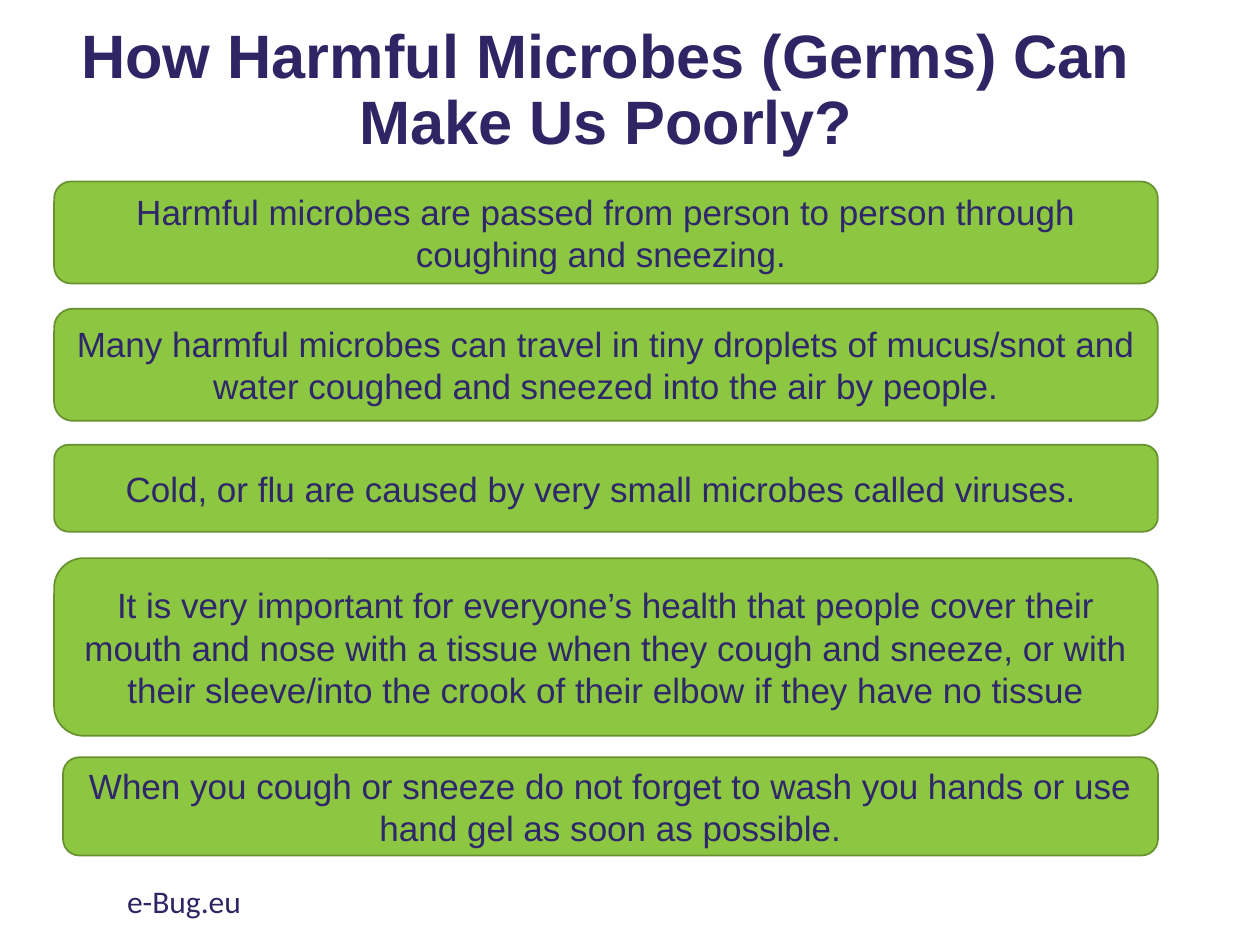
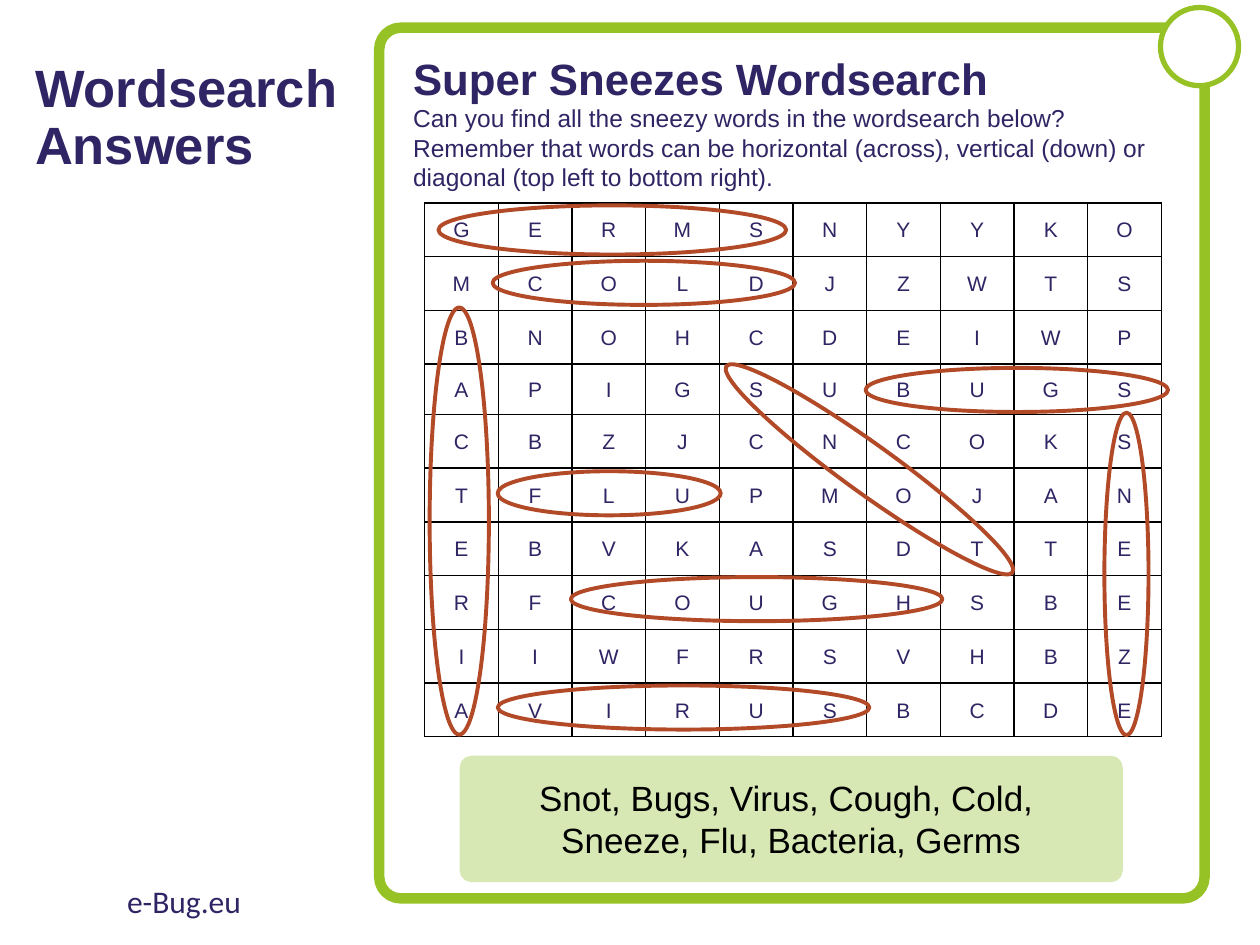
from dataclasses import dataclass

from lxml import etree
from pptx import Presentation
from pptx.dml.color import RGBColor
from pptx.enum.shapes import MSO_SHAPE
from pptx.enum.text import MSO_ANCHOR, PP_ALIGN
from pptx.oxml.ns import qn
from pptx.util import Inches, Pt

ROUND_RECT, ELLIPSE = MSO_SHAPE.ROUNDED_RECTANGLE, MSO_SHAPE.OVAL
LEFT, CENTER = PP_ALIGN.LEFT, PP_ALIGN.CENTER
TOP, MIDDLE = MSO_ANCHOR.TOP, MSO_ANCHOR.MIDDLE

NAVY, FACT_TEXT, BLACK, WHITE = "302564", "2E276A", "000000", "FFFFFF"
FACT_FILL, FACT_LINE = "8DC641", "689230"
FRAME_GREEN, PALE_GREEN, RING_RED = "96C225", "D7E8B5", "B24A28"


@dataclass
class Box:
    left: float
    top: float
    width: float
    height: float

    def lengths(self):
        return [Inches(v) for v in (self.left, self.top, self.width, self.height)]


@dataclass
class Style:
    size: float
    color: str = NAVY
    bold: bool = False
    font: str = "Arial"
    align: PP_ALIGN = LEFT
    spacing: float = 1.0


@dataclass
class Fact:
    box: Box
    text: str


@dataclass
class Ring:
    """An ellipse round one found word."""
    box: Box
    rotation: float = 0


FOOTER = Style(18, font="Calibri")
FACT = Style(20, FACT_TEXT, align=CENTER)
ANSWERS = Style(20, BLACK, align=CENTER)
LETTER = Style(12, align=CENTER, spacing=1.07)

FACTS = [
    Fact(Box(0.43, 1.44, 8.76, 0.81),
         "Harmful microbes are passed from person to person through coughing and sneezing. "),
    Fact(Box(0.43, 2.45, 8.76, 0.89),
         "Many harmful microbes can travel in tiny droplets of mucus/snot and water "
         "coughed and sneezed into the air by people."),
    Fact(Box(0.43, 3.53, 8.76, 0.69),
         "Cold, or flu are caused by very small microbes called viruses. "),
    Fact(Box(0.43, 4.43, 8.76, 1.41),
         "It is very important for everyone’s health that people cover their mouth and nose "
         "with a tissue when they cough and sneeze, or with their sleeve/into the crook of "
         "their elbow if they have no tissue"),
    Fact(Box(0.5, 6.01, 8.69, 0.78),
         "When you cough or sneeze do not forget to wash you hands or use hand gel "
         "as soon as possible."),
]

LETTERS = [
    "GERMSNYYKO",
    "MCOLDJZWTS",
    "BNOHCDEIWP",
    "APIGSUBUGS",
    "CBZJCNCOKS",
    "TFLUPMOJAN",
    "EBVKASDTTE",
    "RFCOUGHSBE",
    "IIWFRSVHBZ",
    "AVIRUSBCDE",
]
GRID = Box(3.37, 1.61, 5.85, 4.24)
SHORT_ROW, SHORT_ROW_HEIGHT = 3, 0.4

RINGS = [
    Ring(Box(3.48, 1.63, 2.76, 0.39)),        # germs
    Ring(Box(3.91, 2.07, 2.4, 0.35)),         # cold
    Ring(Box(1.95, 3.9, 3.39, 0.47), 90),     # bacteria
    Ring(Box(5.5, 3.53, 2.8, 0.39), 35.8),    # snot
    Ring(Box(6.87, 2.92, 2.4, 0.35)),         # bugs
    Ring(Box(3.95, 5.44, 2.95, 0.35)),        # virus
    Ring(Box(4.53, 4.58, 2.95, 0.35)),        # cough
    Ring(Box(7.66, 4.38, 2.56, 0.35), 90),    # sneeze
    Ring(Box(3.95, 3.74, 1.77, 0.35)),        # flu
]


def rgb(value: str) -> RGBColor:
    return RGBColor.from_string(value)


def write(tf, paragraphs: list[str], style: Style, anchor=TOP) -> None:
    """Fill a text frame; a newline inside a paragraph is a line break."""
    tf.word_wrap = True
    tf.vertical_anchor = anchor
    for i, text in enumerate(paragraphs):
        p = tf.add_paragraph() if i else tf.paragraphs[0]
        p.alignment = style.align
        p.line_spacing = style.spacing
        for j, line in enumerate(text.split("\n")):
            if j:
                p.add_line_break()
            r = p.add_run()
            r.text = line
            r.font.name = style.font
            r.font.size = Pt(style.size)
            r.font.bold = style.bold
            r.font.color.rgb = rgb(style.color)


def add_text(s, box: Box, text: str, style: Style, anchor=TOP) -> None:
    write(s.shapes.add_textbox(*box.lengths()).text_frame, [text], style, anchor)


def add_panel(s, kind, box: Box, line: str, weight: float, fill: str | None = None,
              corner: float | None = None):
    sp = s.shapes.add_shape(kind, *box.lengths())
    sp.shadow.inherit = False
    if fill:
        sp.fill.solid()
        sp.fill.fore_color.rgb = rgb(fill)
    else:
        sp.fill.background()
    sp.line.color.rgb = rgb(line)
    sp.line.width = Pt(weight)
    if corner is not None:
        sp.adjustments[0] = corner
    return sp


def add_base_slide(prs, title: str, box: Box, size: float, align: PP_ALIGN):
    """Add a blank slide with the shared title style and footer."""
    s = prs.slides.add_slide(prs.slide_layouts[6])
    add_text(s, box, title, Style(size, bold=True, align=align, spacing=0.9), MIDDLE)
    add_text(s, Box(0.91, 6.95, 3.38, 0.4), "e-Bug.eu", FOOTER)
    return s


def set_borders(cell, color: str, weight: float) -> None:
    tc_pr = cell._tc.get_or_add_tcPr()
    for side in ("a:lnL", "a:lnR", "a:lnT", "a:lnB"):
        ln = etree.SubElement(tc_pr, qn(side), w=str(Pt(weight)))
        fill = etree.SubElement(ln, qn("a:solidFill"))
        etree.SubElement(fill, qn("a:srgbClr"), val=color)


def add_letter_grid(s) -> None:
    rows, cols = len(LETTERS), len(LETTERS[0])
    table = s.shapes.add_table(rows, cols, *GRID.lengths()).table
    table.first_row = table.horz_banding = False
    for column in table.columns:
        column.width = Inches(GRID.width / cols)
    row_height = (GRID.height - SHORT_ROW_HEIGHT) / (rows - 1)
    for i, word in enumerate(LETTERS):
        table.rows[i].height = Inches(SHORT_ROW_HEIGHT if i == SHORT_ROW else row_height)
        for j, letter in enumerate(word):
            cell = table.cell(i, j)
            cell.margin_left = cell.margin_right = Inches(0.07)
            cell.margin_top = cell.margin_bottom = 0
            cell.vertical_anchor = MIDDLE
            set_borders(cell, BLACK, 1)
            cell.fill.background()
            write(cell.text_frame, [letter], LETTER, MIDDLE)
            cell.text_frame.paragraphs[0].space_after = Pt(8)


def build_facts_slide(prs) -> None:
    s = add_base_slide(prs, "How Harmful Microbes (Germs) Can Make Us Poorly?",
                       Box(0.5, 0, 8.62, 1.45), 35, CENTER)
    for fact in FACTS:
        sp = add_panel(s, ROUND_RECT, fact.box, FACT_LINE, 1, FACT_FILL)
        write(sp.text_frame, [fact.text], FACT, MIDDLE)


def build_wordsearch_slide(prs) -> None:
    s = add_base_slide(prs, "Wordsearch\nAnswers", Box(0.18, 0.26, 3.16, 1.37), 30, LEFT)
    add_panel(s, ROUND_RECT, Box(3.01, 0.22, 6.55, 6.91), FRAME_GREEN, 6, corner=0.026)
    add_panel(s, ELLIPSE, Box(9.21, 0.06, 0.62, 0.62), FRAME_GREEN, 3, WHITE)
    add_text(s, Box(3.18, 0.36, 5.48, 0.52), "Super Sneezes Wordsearch", Style(25, bold=True))
    add_text(s, Box(3.18, 0.77, 6.21, 0.81),
             "Can you find all the sneezy words in the wordsearch below? Remember that words "
             "can be horizontal (across), vertical (down) or diagonal (top left to bottom right).",
             Style(14))
    add_letter_grid(s)
    answers = add_panel(s, ROUND_RECT, Box(3.68, 6.03, 5.2, 0.94), PALE_GREEN, 4.5,
                        PALE_GREEN, 0.067)
    write(answers.text_frame,
          ["Snot, Bugs, Virus, Cough, Cold, ", "Sneeze, Flu, Bacteria, Germs"], ANSWERS, MIDDLE)
    for ring in RINGS:
        add_panel(s, ELLIPSE, ring.box, RING_RED, 2.25).rotation = ring.rotation


def main() -> None:
    prs = Presentation()
    prs.slide_width, prs.slide_height = Inches(10), Inches(7.5)
    build_facts_slide(prs)
    build_wordsearch_slide(prs)
    prs.save("out.pptx")


if __name__ == "__main__":
    main()
